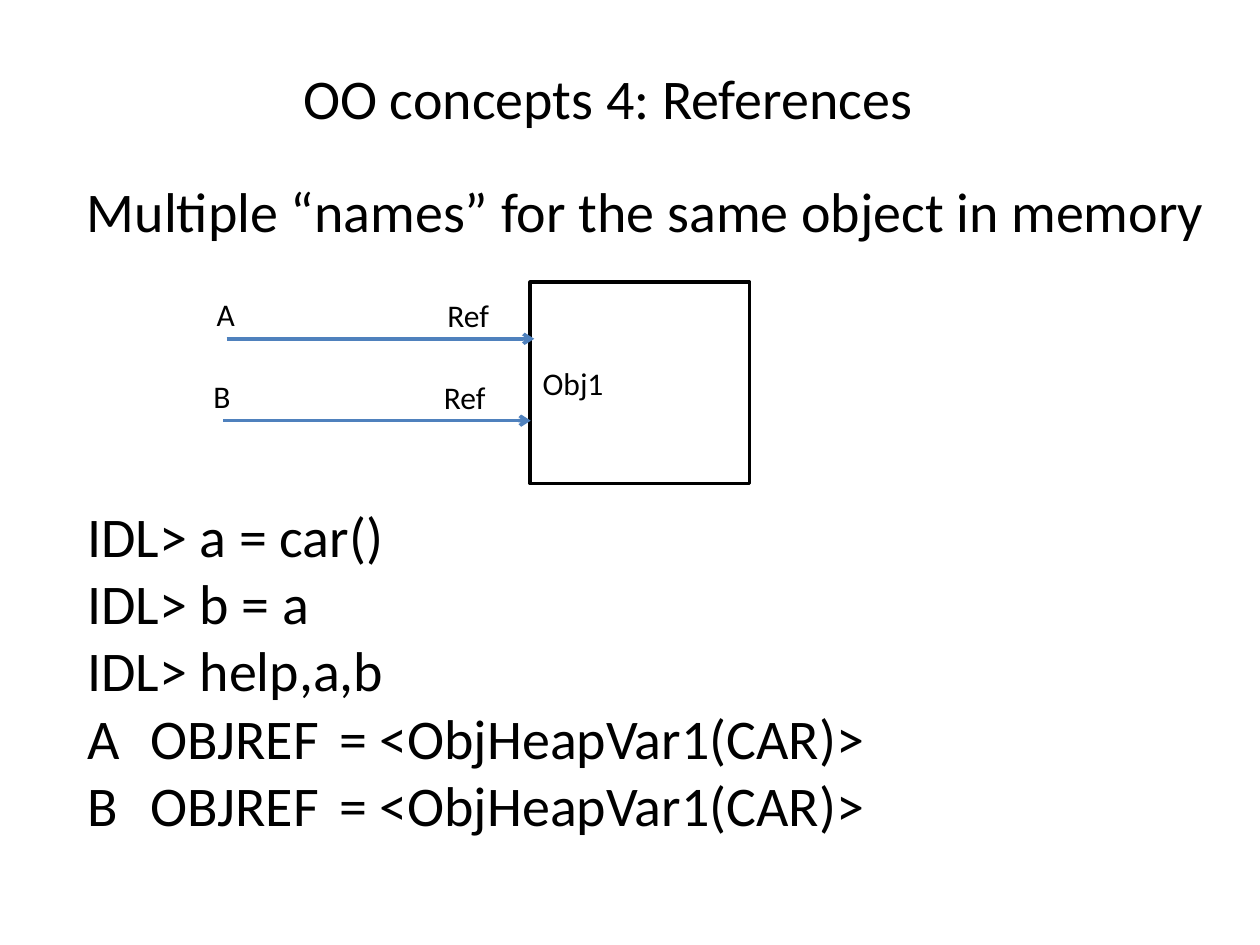
"""Build the slide on object references."""
from dataclasses import dataclass

from lxml.etree import SubElement
from pptx import Presentation
from pptx.dml.color import RGBColor
from pptx.enum.shapes import MSO_CONNECTOR as Connector, MSO_SHAPE as Shape
from pptx.enum.text import MSO_ANCHOR as Anchor, MSO_AUTO_SIZE as AutoSize, PP_ALIGN as Align
from pptx.oxml.ns import qn
from pptx.util import Cm, Pt

BLACK, WHITE, BLUE = "000000", "FFFFFF", "4F81BD"
FONT = "Calibri"
LARGE, SMALL = 32, 18
TAB_STOPS = (4.45, 8.89)
CODE_LINES = (
    "IDL> a = car()",
    "IDL> b = a",
    "IDL> help,a,b",
    "A\tOBJREF\t= <ObjHeapVar1(CAR)>",
    "B\tOBJREF\t= <ObjHeapVar1(CAR)>",
)


@dataclass(frozen=True)
class Box:
    """Position and size in centimetres."""
    left: float
    top: float
    width: float
    height: float

    def lengths(self) -> tuple:
        """Return the four values as lengths."""
        return Cm(self.left), Cm(self.top), Cm(self.width), Cm(self.height)


@dataclass(frozen=True)
class Reference:
    """A named arrow pointing at the object."""
    name: str
    left: float
    top: float


REFERENCES = (Reference("A", 4.57, 6.83), Reference("B", 4.5, 8.48))


def color(value: str) -> RGBColor:
    """Turn a hex string into a colour."""
    return RGBColor.from_string(value)


def add_run(paragraph, text: str, size: int) -> None:
    """Append a black run to a paragraph."""
    run = paragraph.add_run()
    run.text = text
    run.font.name = FONT
    run.font.size = Pt(size)
    run.font.color.rgb = color(BLACK)


def place(shape, box: Box) -> None:
    """Move and resize a shape."""
    shape.left, shape.top, shape.width, shape.height = box.lengths()


def add_label(shapes, text: str, size: int, box: Box) -> None:
    """Add a one-line text box that fits its text."""
    frame = shapes.add_textbox(*box.lengths()).text_frame
    frame.word_wrap = False
    frame.auto_size = AutoSize.SHAPE_TO_FIT_TEXT
    add_run(frame.paragraphs[0], text, size)


def add_arrow(shapes, left: float, top: float, length: float) -> None:
    """Add a horizontal arrow pointing right."""
    arrow = shapes.add_connector(Connector.STRAIGHT, Cm(left), Cm(top), Cm(left + length), Cm(top))
    arrow.line.color.rgb = color(BLUE)
    arrow.line.width = Pt(2)
    SubElement(arrow.line._get_or_add_ln(), qn("a:tailEnd"), type="arrow")
    SubElement(arrow._element.spPr, qn("a:effectLst"))


def add_reference(slide, reference: Reference) -> None:
    """Add a grouped arrow with its name and its Ref label."""
    shapes = slide.shapes.add_group_shape().shapes
    left, top = reference.left, reference.top
    add_label(shapes, "Ref", SMALL, Box(left + 4.2, top - 0.99, 1.4, 1.02))
    add_label(shapes, reference.name, SMALL, Box(left - 0.45, top - 1.01, 0.88, 1.02))
    add_arrow(shapes, left, top, 6.2)


def add_object(slide, name: str, box: Box) -> None:
    """Add the rectangle that stands for the object in memory."""
    shape = slide.shapes.add_shape(Shape.RECTANGLE, *box.lengths())
    shape.shadow.inherit = False
    shape.fill.solid()
    shape.fill.fore_color.rgb = color(WHITE)
    shape.line.color.rgb = color(BLACK)
    shape.line.width = Pt(2)
    shape.text_frame.vertical_anchor = Anchor.MIDDLE
    paragraph = shape.text_frame.paragraphs[0]
    paragraph.alignment = Align.LEFT
    add_run(paragraph, name, SMALL)


def format_code(paragraph) -> None:
    """Remove bullet, indent and spacing, and set the tab stops."""
    paragraph.space_before = Pt(0)
    properties = paragraph._p.get_or_add_pPr()
    properties.set("marL", "0")
    properties.set("indent", "0")
    SubElement(properties, qn("a:buNone"))
    tabs = SubElement(properties, qn("a:tabLst"))
    for position in TAB_STOPS:
        SubElement(tabs, qn("a:tab"), pos=str(Cm(position)), algn="l")


def fill_code(placeholder, lines: tuple[str, ...]) -> None:
    """Write the session lines into the body placeholder."""
    frame = placeholder.text_frame
    frame.auto_size = AutoSize.NONE
    for index, line in enumerate(lines):
        paragraph = frame.add_paragraph() if index else frame.paragraphs[0]
        format_code(paragraph)
        add_run(paragraph, line, LARGE)


def main() -> None:
    """Build and save the presentation."""
    presentation = Presentation()
    presentation.slide_width, presentation.slide_height = Cm(25.4), Cm(19.05)
    slide = presentation.slides.add_slide(presentation.slide_layouts[1])
    title, body = slide.placeholders
    place(title, Box(0.38, 0.36, 23.75, 3.18))
    add_run(title.text_frame.paragraphs[0], "OO concepts 4: References", LARGE)
    place(body, Box(1.5, 9.98, 22.63, 7.09))
    fill_code(body, CODE_LINES)
    add_object(slide, "Obj1", Box(10.69, 5.69, 4.42, 4.06))
    for reference in REFERENCES:
        add_reference(slide, reference)
    statement = "Multiple “names” for the same object in memory"
    add_label(slide.shapes, statement, LARGE, Box(1.5, 3.43, 23.27, 1.63))
    presentation.save("out.pptx")


if __name__ == "__main__":
    main()
